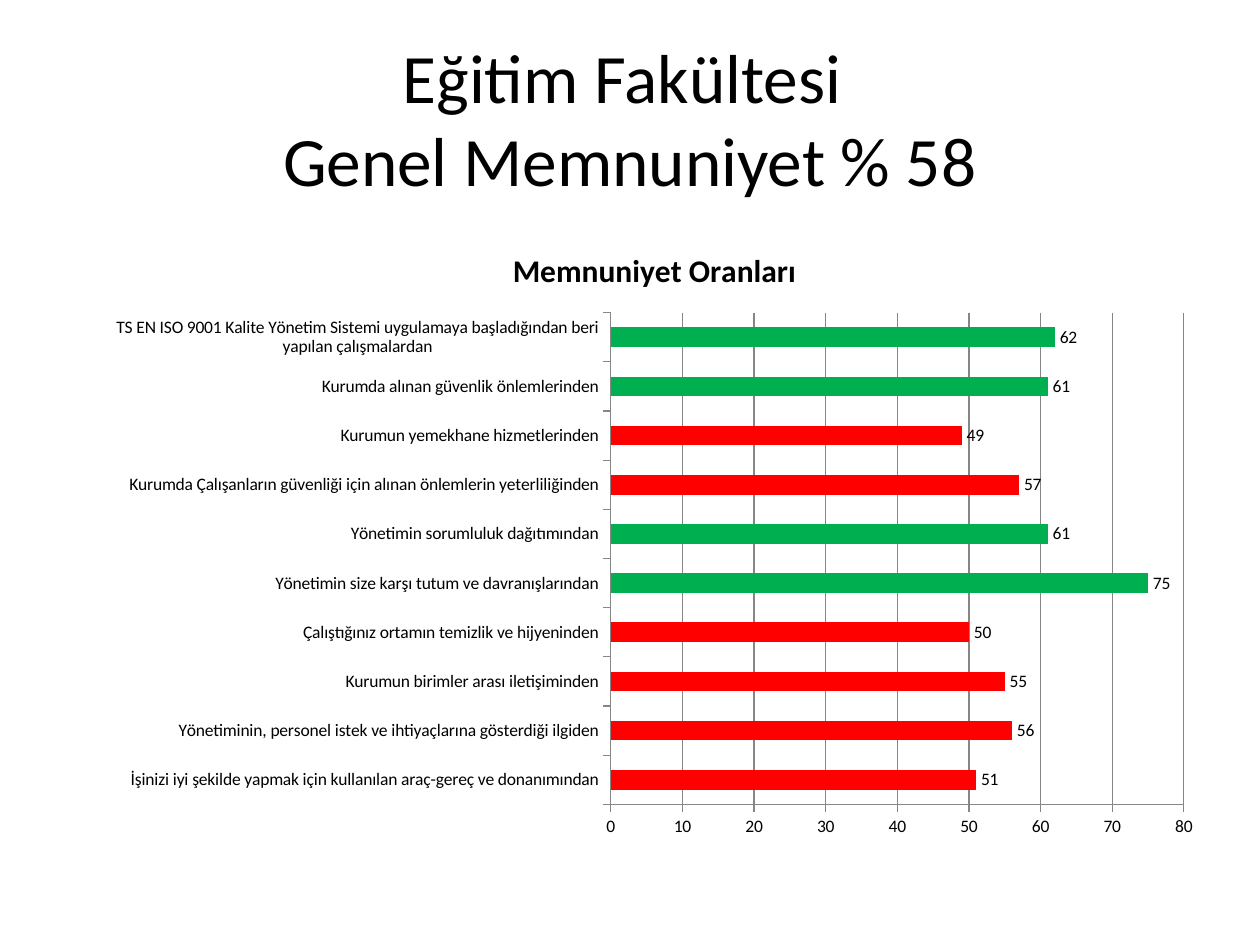
from pptx import Presentation
from pptx.chart.data import CategoryChartData
from pptx.dml.color import RGBColor
from pptx.enum.chart import XL_CHART_TYPE as CT, XL_LABEL_POSITION as LP, XL_TICK_MARK as TM
from pptx.enum.text import MSO_ANCHOR as ANCHOR, PP_ALIGN as ALIGN
from pptx.util import Emu, Pt

RATES = [
    ("İşinizi iyi şekilde yapmak için kullanılan araç-gereç ve donanımından", 51),
    ("Yönetiminin, personel istek ve ihtiyaçlarına gösterdiği ilgiden", 56),
    ("Kurumun birimler arası iletişiminden", 55),
    ("Çalıştığınız ortamın temizlik ve hijyeninden", 50),
    ("Yönetimin size karşı tutum ve davranışlarından", 75),
    ("Yönetimin sorumluluk dağıtımından", 61),
    ("Kurumda Çalışanların güvenliği için alınan önlemlerin yeterliliğinden", 57),
    ("Kurumun yemekhane hizmetlerinden", 49),
    ("Kurumda alınan güvenlik önlemlerinden", 61),
    ("TS EN ISO 9001 Kalite Yönetim Sistemi uygulamaya başladığından beri "
     "yapılan çalışmalardan", 62),
]
TARGET = 60


def px(n):
    return Emu(round(n * 914400 / 126))


def rgb(color):
    return RGBColor.from_string(color)


class Deck:
    """Holds the style and the current slide."""

    font, ink, grid, good, poor = "Calibri", "000000", "868686", "00B050", "FF0000"

    def __init__(self, prs):
        self.s = prs.slides.add_slide(prs.slide_layouts[5])

    def style(self, font, size, bold=False):
        font.name, font.size, font.bold = self.font, Pt(size), bold
        font.color.rgb = rgb(self.ink)

    def line(self, fmt):
        fmt.line.color.rgb = rgb(self.grid)
        fmt.line.width = Pt(0.75)

    def title(self, text, x, y, w, h, size):
        sp = self.s.shapes.title
        sp.left, sp.top, sp.width, sp.height = map(px, (x, y, w, h))
        tf = sp.text_frame
        tf.word_wrap = True
        tf.vertical_anchor = ANCHOR.MIDDLE
        tf.text = text
        p = tf.paragraphs[0]
        p.alignment = ALIGN.CENTER
        self.style(p.font, size)

    def bars(self, name, rates, x, y, w, h):
        data = CategoryChartData()
        data.categories = [label for label, _ in rates]
        data.add_series(name, [value for _, value in rates])
        chart = self.s.shapes.add_chart(
            CT.BAR_CLUSTERED, *map(px, (x, y, w, h)), data).chart
        self.style(chart.font, 10)
        chart.has_legend = False
        chart.has_title = True
        tf = chart.chart_title.text_frame
        tf.text = name
        self.style(tf.paragraphs[0].font, 18, True)
        for axis in (chart.category_axis, chart.value_axis):
            axis.major_tick_mark = TM.OUTSIDE
            axis.minor_tick_mark = TM.NONE
            self.line(axis.format)
        axis = chart.value_axis
        axis.minimum_scale, axis.maximum_scale, axis.major_unit = 0, 80, 10
        axis.has_major_gridlines = True
        self.line(axis.major_gridlines.format)
        plot = chart.plots[0]
        plot.gap_width = 150
        plot.vary_by_categories = False
        plot.has_data_labels = True
        plot.data_labels.show_value = True
        plot.data_labels.position = LP.OUTSIDE_END
        series = plot.series[0]
        series.invert_if_negative = False
        for i, (_, value) in enumerate(rates):
            fill = series.points[i].format.fill
            fill.solid()
            fill.fore_color.rgb = rgb(self.good if value >= TARGET else self.poor)


def main():
    prs = Presentation()
    prs.slide_width, prs.slide_height = px(1260), px(945)
    deck = Deck(prs)
    deck.title("Eğitim Fakültesi \vGenel Memnuniyet % 58", 63, 38, 1134, 158, 39.6)
    deck.bars("Memnuniyet Oranları", RATES, 94, 224, 1121, 625)
    prs.save("out.pptx")


if __name__ == "__main__":
    main()
